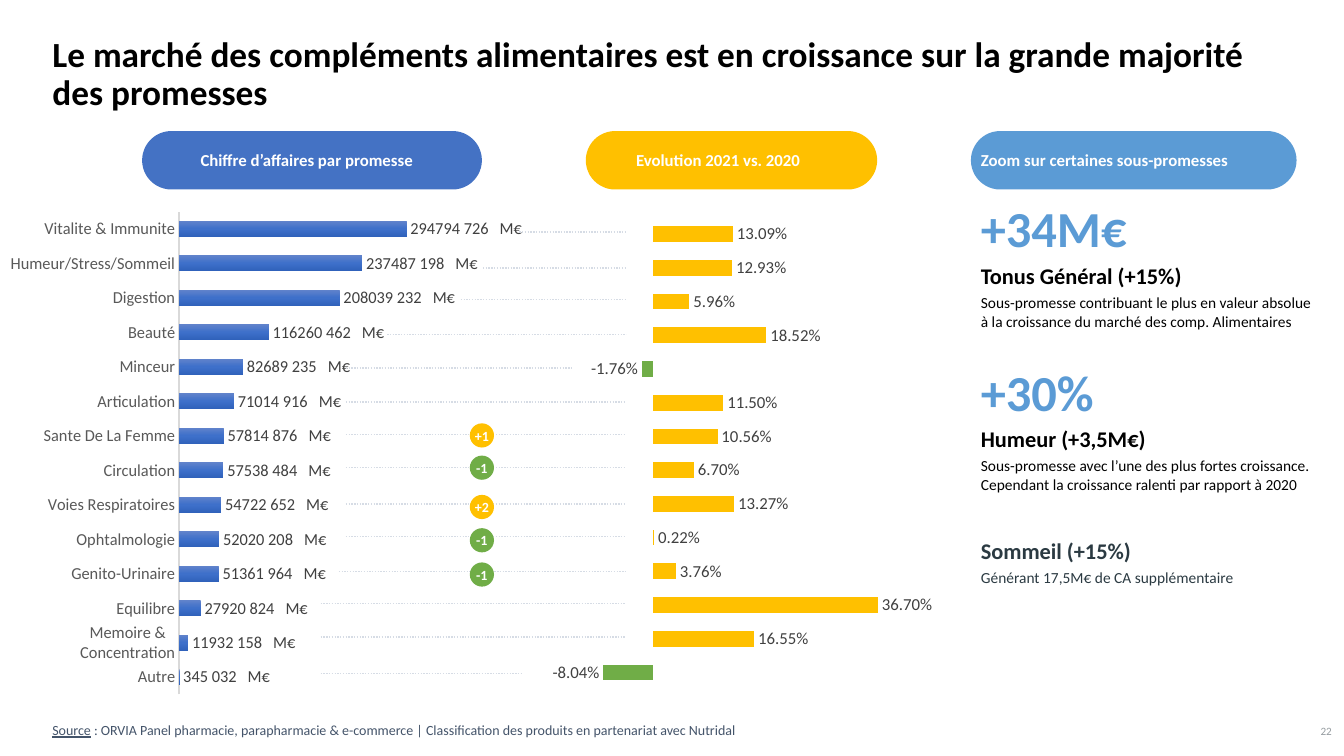
from copy import deepcopy

from lxml.etree import SubElement
from pptx import Presentation
from pptx.chart.data import CategoryChartData
from pptx.dml.color import RGBColor
from pptx.enum.chart import XL_CHART_TYPE as Chart, XL_LABEL_POSITION as LabelPos, XL_TICK_MARK as Tick
from pptx.enum.dml import MSO_LINE as Dash
from pptx.enum.shapes import MSO_CONNECTOR as Connector, MSO_SHAPE as Shape
from pptx.enum.text import MSO_ANCHOR as Anchor, MSO_AUTO_SIZE as AutoSize, PP_ALIGN as Align
from pptx.oxml import parse_xml
from pptx.oxml.ns import nsdecls, qn
from pptx.util import Inches, Pt

FONT = "Calibri"
BLUE, GOLD, SKY, GREEN = "4472C4", "FFC000", "5B9BD5", "70AD47"
EURO_FORMAT = '#\\ ##0\\ \\ " M€"'

PROMISES = [
    ("Vitalite & Immunite", 294794726, 0.1309),
    ("Humeur/Stress/Sommeil", 237487198, 0.1293),
    ("Digestion", 208039232, 0.0596),
    ("Beauté", 116260462, 0.1852),
    ("Minceur", 82689235, -0.0176),
    ("Articulation", 71014916, 0.115),
    ("Sante De La Femme", 57814876, 0.1056),
    ("Circulation", 57538484, 0.067),
    ("Voies Respiratoires", 54722652, 0.1327),
    ("Ophtalmologie", 52020208, 0.0022),
    ("Genito-Urinaire", 51361964, 0.0376),
    ("Equilibre", 27920824, 0.367),
    ("Memoire & Concentration", 11932158, 0.1655),
    ("Autre", 345032, -0.0804),
]
LEADERS = [
    (5.15, 6.21, 2.3), (4.79, 6.21, 2.66), (4.57, 6.21, 2.97), (3.84, 6.21, 3.32),
    (3.43, 5.68, 3.65), (3.43, 6.21, 3.99), (3.43, 6.21, 4.31), (3.43, 6.21, 4.64),
    (3.43, 6.21, 5), (3.43, 6.21, 5.32), (3.36, 6.21, 5.67), (3.18, 6.21, 5.99),
    (3.18, 6.21, 6.32), (3.18, 5.17, 6.68),
]
RANK_MOVES = [(4.2, "+1"), (4.52, "-1"), (4.91, "+2"), (5.24, "-1"), (5.58, "-1")]


def rgb(value):
    """Turn a hex string into a colour."""
    return RGBColor.from_string(value)


def style(font, size, color, bold=False, underline=False):
    """Format a font."""
    font.name, font.size, font.bold, font.underline = FONT, Pt(size), bold, underline
    font.color.rgb = rgb(color)


def write(paragraph, text, align=Align.LEFT, after=0, **look):
    """Add a formatted run to a paragraph."""
    paragraph.alignment = align
    paragraph.space_after = Pt(after)
    run = paragraph.add_run()
    run.text = text
    style(run.font, **look)


def add_box(slide, box, wrap=True):
    """Add a text box and return its frame."""
    frame = slide.shapes.add_textbox(*map(Inches, box)).text_frame
    frame.word_wrap = wrap
    return frame


def add_plain_shape(slide, kind, box, color):
    """Add a filled shape without outline or shadow."""
    shape = slide.shapes.add_shape(kind, *map(Inches, box))
    shape.shadow.inherit = False
    shape.fill.solid()
    shape.fill.fore_color.rgb = rgb(color)
    shape.line.fill.background()
    return shape


def add_title(slide, box, text):
    """Fill and place the title placeholder."""
    title = slide.shapes.title
    title.left, title.top, title.width, title.height = map(Inches, box)
    frame = title.text_frame
    frame.auto_size = AutoSize.NONE
    frame.vertical_anchor = Anchor.BOTTOM
    frame.paragraphs[0].line_spacing = 0.9
    write(frame.paragraphs[0], text, size=25.2, color="000000", bold=True)


def add_heading(slide, box, text, color, indent):
    """Draw a column heading as a pill with its caption."""
    left, top, width, height = box
    pill = add_plain_shape(slide, Shape.ROUNDED_RECTANGLE, box, color)
    pill.adjustments[0] = 0.5
    caption = add_box(slide, (left + indent, top + 0.14, width - 2 * indent, 0.3), wrap=False)
    write(caption.paragraphs[0], text, size=12, color="FFFFFF", bold=True)


def add_zoom(slide, box, heading, detail, figure=None, color="000000"):
    """Write one sub-promise block."""
    frame = add_box(slide, box)
    lines = [(heading, 16, color, True), (detail, 11, color, False)]
    if figure:
        lines.insert(0, (figure, 36, SKY, True))
    for index, (text, size, tint, bold) in enumerate(lines):
        paragraph = frame.add_paragraph() if index else frame.paragraphs[0]
        write(paragraph, text, after=3, size=size, color=tint, bold=bold)


def set_plot_area(chart, area):
    """Fix the inner plot area as fractions of the chart."""
    plot_area = chart._chartSpace.find(".//" + qn("c:plotArea"))
    for old in plot_area.findall(qn("c:layout")):
        plot_area.remove(old)
    layout = parse_xml(f"<c:layout {nsdecls('c')}><c:manualLayout/></c:layout>")
    settings = [("layoutTarget", "inner"), ("xMode", "edge"), ("yMode", "edge"), *zip("xywh", area)]
    for tag, value in settings:
        SubElement(layout[0], qn(f"c:{tag}")).set("val", str(value))
    plot_area.insert(0, layout)


def add_bars(slide, box, categories, values, number_format, scale, area):
    """Add a horizontal bar chart and return it."""
    data = CategoryChartData()
    data.categories = categories
    data.add_series("Series 1", values)
    chart = slide.shapes.add_chart(Chart.BAR_CLUSTERED, *map(Inches, box), data).chart
    chart.has_title = chart.has_legend = False
    style(chart.font, 10, "000000")
    set_plot_area(chart, area)
    chart.category_axis.reverse_order = True
    axis = chart.value_axis
    axis.minimum_scale, axis.maximum_scale = scale
    axis.has_major_gridlines = axis.visible = False
    plot = chart.plots[0]
    plot.gap_width, plot.overlap, plot.vary_by_categories = 115, -20, False
    plot.series[0].invert_if_negative = False
    plot.has_data_labels = True
    labels = plot.data_labels
    labels.show_value = True
    labels.position = LabelPos.OUTSIDE_END
    labels.number_format, labels.number_format_is_linked = number_format, False
    style(labels.font, 12, "404040")
    return chart


def add_revenue(slide, box):
    """Chart the revenue of each promise with gradient bars."""
    names, revenues, _ = zip(*PROMISES)
    chart = add_bars(slide, box, names, revenues, EURO_FORMAT, (0, 350000000), (0.34, 0.02, 0.54, 0.96))
    axis = chart.category_axis
    axis.major_tick_mark = axis.minor_tick_mark = Tick.NONE
    style(axis.tick_labels.font, 12, "595959")
    axis.format.line.color.rgb = rgb("D9D9D9")
    axis.format.line.width = Pt(1)
    series = chart.plots[0].series[0]
    fill = series.format.fill
    fill.gradient()
    fill.gradient_angle = 270
    stops = series._element.find(".//" + qn("a:gsLst"))
    stops.insert(1, deepcopy(stops[0]))
    for stop, position, color in zip(fill.gradient_stops, (0, 0.5, 1), ("6183CB", "3E70CA", "3062BB")):
        stop.position = position
        stop.color.rgb = rgb(color)


def add_growth(slide, box):
    """Chart the growth of each promise, gold for gains and green for losses."""
    growths = [growth for _, _, growth in PROMISES]
    ranks = [str(rank) for rank in range(1, len(growths) + 1)]
    chart = add_bars(slide, box, ranks, growths, "0.00%", (-0.2, 0.4), (0.025, 0.031, 0.849, 0.939))
    chart.category_axis.visible = False
    for index, growth in enumerate(growths):
        fill = chart.plots[0].series[0].points[index].format.fill
        fill.solid()
        fill.fore_color.rgb = rgb(GOLD if growth > 0 else GREEN)


def add_leader(slide, start, end, y):
    """Draw a dotted line from a revenue to its growth."""
    leader = slide.shapes.add_connector(Connector.STRAIGHT, *map(Inches, (start, y, end, y)))
    leader.line.color.rgb = rgb("D6DCE5")
    leader.line.width = Pt(1)
    leader.line.dash_style = Dash.ROUND_DOT
    SubElement(leader._element.spPr, qn("a:effectLst"))


def add_rank_move(slide, box, move):
    """Draw a badge with a change of rank."""
    badge = add_plain_shape(slide, Shape.OVAL, box, GOLD if move[0] == "+" else GREEN)
    frame = badge.text_frame
    frame.margin_left = frame.margin_right = 0
    frame.vertical_anchor = Anchor.MIDDLE
    write(frame.paragraphs[0], move, align=Align.CENTER, size=10, color="FFFFFF", bold=True)


def add_footer(slide, source_box, number_box):
    """Write the source and the page number."""
    source = add_box(slide, source_box, wrap=False).paragraphs[0]
    write(source, "Source", size=10, color="44546A", underline=True)
    write(source, " : ORVIA Panel pharmacie, parapharmacie & e-commerce | "
          "Classification des produits en partenariat avec Nutridal", size=10, color="44546A")
    number = add_box(slide, number_box)
    number.margin_left = number.margin_right = number.margin_top = number.margin_bottom = 0
    number.vertical_anchor = Anchor.MIDDLE
    write(number.paragraphs[0], "22", align=Align.RIGHT, size=8, color="959CA0")


def main():
    """Build the slide and save it."""
    deck = Presentation()
    deck.slide_width, deck.slide_height = Inches(13.33), Inches(7.5)
    slide = deck.slides.add_slide(deck.slide_layouts[5])
    add_title(slide, (0.42, 0.29, 12.4, 0.88), "Le marché des compléments alimentaires est en "
              "croissance sur la grande majorité des promesses")
    add_heading(slide, (1.41, 1.3, 3.37, 0.58), "Chiffre d’affaires par promesse", BLUE, 0.48)
    add_heading(slide, (5.81, 1.3, 2.89, 0.58), "Evolution 2021 vs. 2020", GOLD, 0.4)
    add_heading(slide, (9.63, 1.3, 3.23, 0.58), "Zoom sur certaines sous-promesses", SKY, 0)
    add_zoom(slide, (9.63, 1.91, 3.48, 1.02), "Tonus Général (+15%)", "Sous-promesse contribuant le plus "
             "en valeur absolue à la croissance du marché des comp. Alimentaires", figure="+34M€")
    add_zoom(slide, (9.63, 3.53, 3.48, 1.02), "Humeur (+3,5M€)", "Sous-promesse avec l’une des plus fortes "
             "croissance. Cependant la croissance ralenti par rapport à 2020", figure="+30%")
    add_zoom(slide, (9.63, 5.28, 3.48, 0.6), "Sommeil (+15%)", "Générant 17,5M€ de CA supplémentaire",
             color="2B3A42")
    add_revenue(slide, (0.09, 2, 5.09, 4.99))
    add_growth(slide, (5.15, 2, 4.3, 4.99))
    for start, end, y in LEADERS:
        add_leader(slide, start, end, y)
    for top, move in RANK_MOVES:
        add_rank_move(slide, (4.66, top, 0.24, 0.24), move)
    add_footer(slide, (0.42, 7.11, 7.68, 0.27), (12.82, 7.16, 0.39, 0.19))
    deck.save("out.pptx")


if __name__ == "__main__":
    main()
